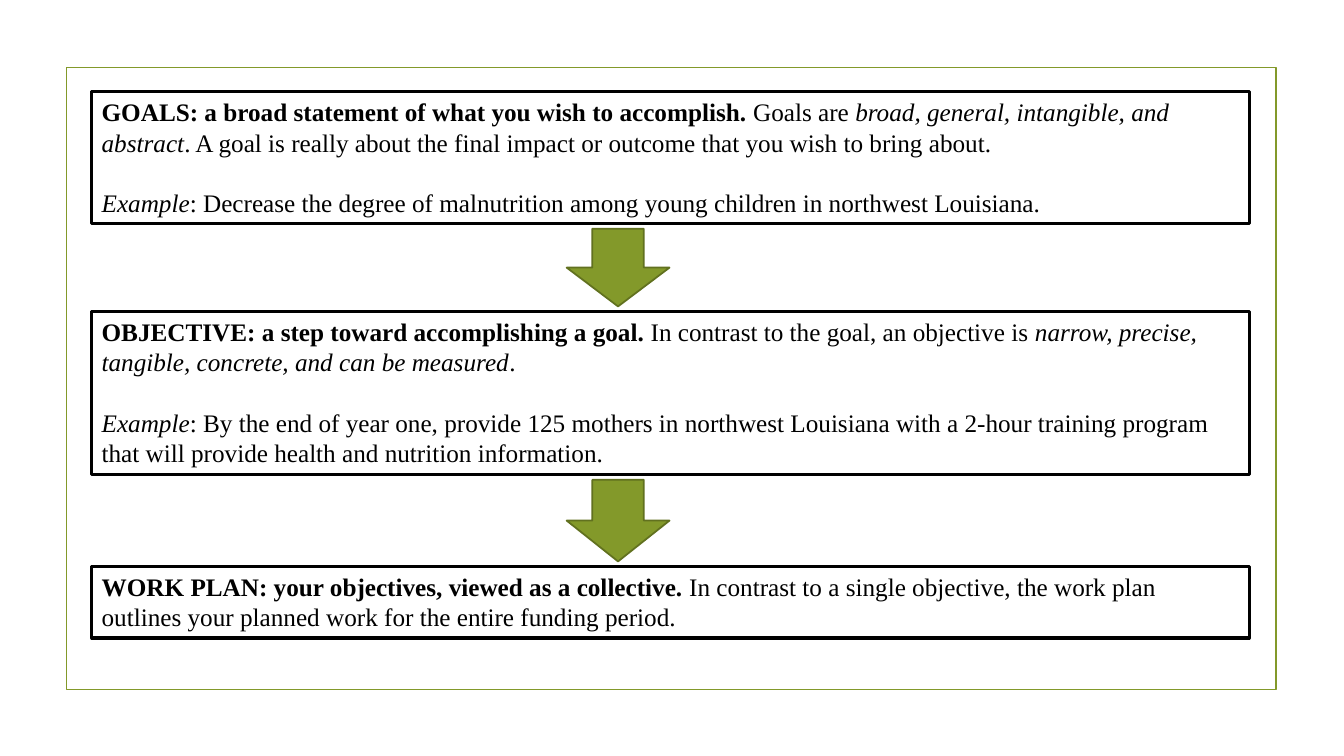
import pptx
import pptx.dml.color
import pptx.enum.shapes
import pptx.enum.text
import pptx.util

Inches = pptx.util.Inches
Pt = pptx.util.Pt
SHAPES = pptx.enum.shapes.MSO_SHAPE

GREEN, DARK_GREEN, BLACK = "83992A", "61711F", "000000"
FONT = "Times New Roman"
BOX_LEFT, BOX_WIDTH = 0.91, 11.48
ARROW_LEFT, ARROW_WIDTH, ARROW_GAP = 5.62, 1.02, 0.05

# Each box: top, height, paragraphs of (text, style) runs
BOXES = [
    (0.91, 1.31, [
        [("GOALS: a broad statement of what you wish to accomplish. ", "bold"),
         ("Goals are ", ""),
         ("broad, general, intangible, and abstract", "italic"),
         (". A goal is really about the final impact or outcome that you wish to bring about.", "")],
        [("Example", "italic"),
         (": Decrease the degree of malnutrition among young children in northwest Louisiana.", "")],
    ]),
    (3.09, 1.62, [
        [("OBJECTIVE: a step toward accomplishing a goal.", "bold"),
         (" In contrast to the goal, an objective is ", ""),
         ("narrow, precise, tangible, concrete, and can be measured", "italic"),
         (".", "")],
        [("Example", "italic"),
         (": By the end of year one, provide 125 mothers in northwest Louisiana with a 2-hour "
          "training program that will provide health and nutrition information.", "")],
    ]),
    (5.62, 0.71, [
        [("WORK PLAN: your objectives, viewed as a collective.", "bold"),
         (" In contrast to a single objective, the work plan outlines your planned work "
          "for the entire funding period.", "")],
    ]),
]


def color(value):
    return pptx.dml.color.RGBColor.from_string(value)


def add_outline(slide, kind, left, top, width, height, line, line_width, fill=None):
    shape = slide.shapes.add_shape(
        kind, Inches(left), Inches(top), Inches(width), Inches(height))
    shape.shadow.inherit = False
    if fill:
        shape.fill.solid()
        shape.fill.fore_color.rgb = color(fill)
    else:
        shape.fill.background()
    shape.line.color.rgb = color(line)
    shape.line.width = Pt(line_width)
    return shape


def add_definition(slide, left, top, width, height, paragraphs):
    shape = add_outline(slide, SHAPES.RECTANGLE, left, top, width, height, BLACK, 2.25)
    text_frame = shape.text_frame
    text_frame.word_wrap = True
    text_frame.auto_size = pptx.enum.text.MSO_AUTO_SIZE.SHAPE_TO_FIT_TEXT
    text_frame.vertical_anchor = pptx.enum.text.MSO_ANCHOR.TOP
    for index, runs in enumerate(paragraphs):
        paragraph = text_frame.add_paragraph() if index else text_frame.paragraphs[0]
        paragraph.alignment = pptx.enum.text.PP_ALIGN.LEFT
        paragraph.space_before = Pt(21.7 if index else 0)
        for text, style in runs:
            run = paragraph.add_run()
            run.text = text
            run.font.name = FONT
            run.font.size = Pt(18)
            run.font.color.rgb = color(BLACK)
            run.font.bold = style == "bold"
            run.font.italic = style == "italic"


def add_down_arrow(slide, top, bottom):
    add_outline(slide, SHAPES.DOWN_ARROW, ARROW_LEFT, top + ARROW_GAP, ARROW_WIDTH,
                bottom - top - 2 * ARROW_GAP, DARK_GREEN, 1.25, GREEN)


def build_slide(presentation):
    slide = presentation.slides.add_slide(presentation.slide_layouts[6])
    # Frame
    add_outline(slide, SHAPES.RECTANGLE, 0.66, 0.67, 12, 6.17, GREEN, 1.25)
    # Definitions
    for top, height, paragraphs in BOXES:
        add_definition(slide, BOX_LEFT, top, BOX_WIDTH, height, paragraphs)
    # Arrows in the gaps between boxes
    for (top, height, _), (next_top, _, _) in zip(BOXES, BOXES[1:]):
        add_down_arrow(slide, top + height, next_top)


def main():
    presentation = pptx.Presentation()
    presentation.slide_width = Inches(13.33)
    presentation.slide_height = Inches(7.5)
    build_slide(presentation)
    presentation.save("out.pptx")


if __name__ == "__main__":
    main()
